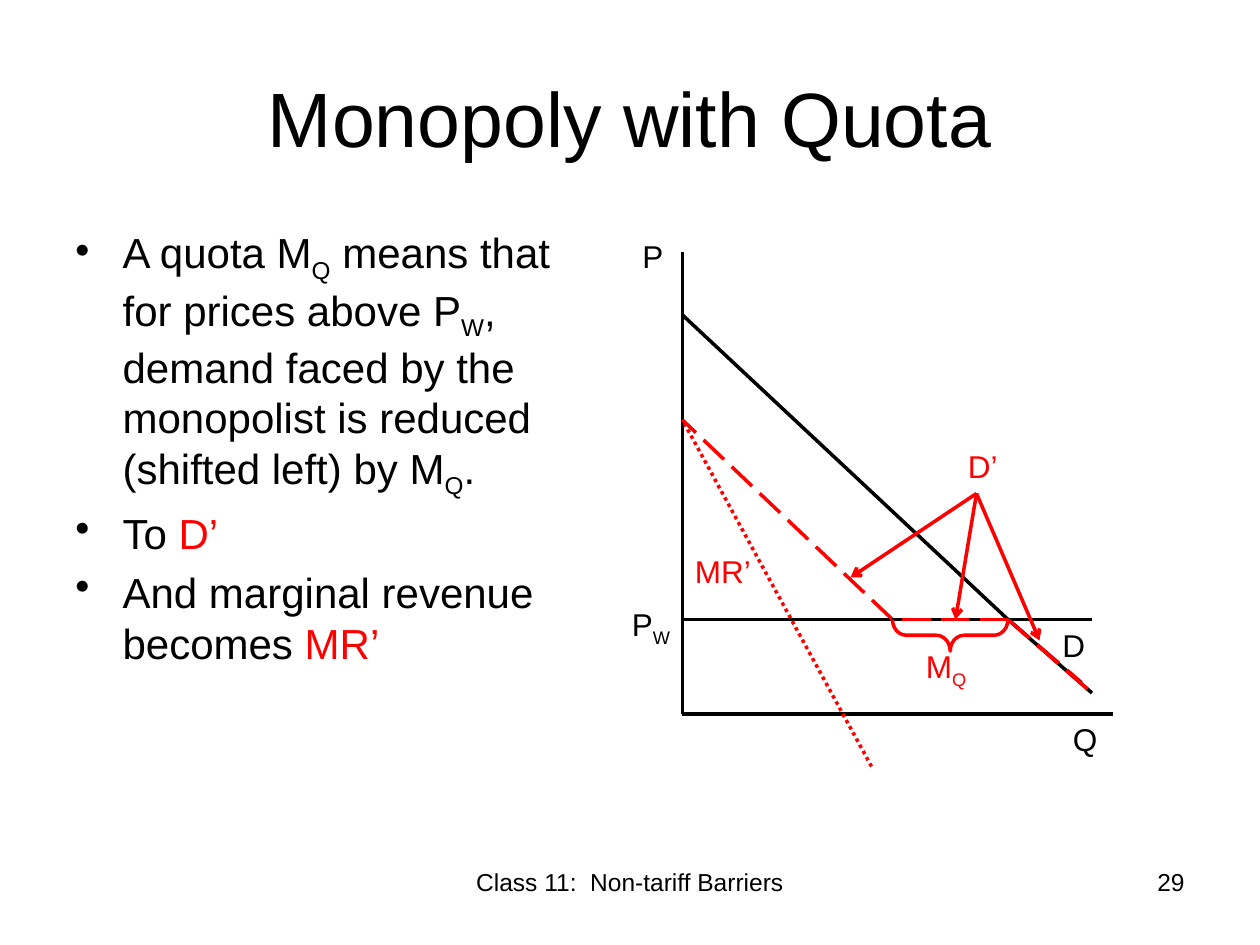
from lxml import etree
from pptx import Presentation, util as u
from pptx.dml.color import RGBColor
from pptx.enum import dml, shapes, text
from pptx.oxml import ns

BLACK, RED = "000000", "FF0000"
LEFT, CENTER, RIGHT = text.PP_ALIGN.LEFT, text.PP_ALIGN.CENTER, text.PP_ALIGN.RIGHT
DASH, DOT = dml.MSO_LINE.LONG_DASH, dml.MSO_LINE.ROUND_DOT

deck = Presentation()
deck.slide_width, deck.slide_height = u.Inches(10), u.Inches(7.5)
slide = deck.slides.add_slide(deck.slide_layouts[6])
cell = deck.slide_width // 120


def color(fmt, hex_value):
    fmt.rgb = RGBColor.from_string(hex_value)


def write(area, paragraphs, size, hex_value=BLACK, align=LEFT):
    box = slide.shapes.add_textbox(*(round(n * cell) for n in area))
    frame = box.text_frame
    frame.word_wrap = True
    for i, pieces in enumerate(paragraphs):
        paragraph = frame.add_paragraph() if i else frame.paragraphs[0]
        paragraph.alignment = align
        paragraph.font.name, paragraph.font.size = "Arial", u.Pt(size)
        color(paragraph.font.color, hex_value)
        for words, *style in pieces:
            run = paragraph.add_run()
            run.text = words
            if "sub" in style:
                run.font._element.set("baseline", "-25000")
            if RED in style:
                color(run.font.color, RED)
    return frame


title = write((6, 3.6, 108, 15), [[("Monopoly with Quota",)]], 44, align=CENTER)
title.vertical_anchor = text.MSO_ANCHOR.MIDDLE

points = write((6, 21, 49, 59.4), [
    [("A quota M",), ("Q", "sub"), (" means that for prices above P",), ("W", "sub"),
     (", demand faced by the monopolist is reduced (shifted left) by M",),
     ("Q", "sub"), (".",)],
    [("To ",), ("D’", RED)],
    [("And marginal revenue becomes ",), ("MR’", RED)],
], 24)
for point in points.paragraphs:
    point.space_before = u.Pt(4.8)
    layout = point._p.get_or_add_pPr()
    layout.set("marL", str(round(4.5 * cell)))
    layout.set("indent", str(round(-4.5 * cell)))
    bullet = etree.Element(ns.qn("a:buChar"), char="•")
    layout.find(ns.qn("a:defRPr")).addprevious(bullet)

origin, price_top, quantity_end = (65, 68), (65, 24), (106, 68)
world_price, quota_start, quota_end = (65, 59), (85, 59), (96, 59)
demand_top, demand_end, reduced_top = (65, 30), (104, 66), (65, 40)
pointer = (93, 47)
curves = [
    (origin, quantity_end, BLACK, None, False),
    (origin, price_top, BLACK, None, False),
    (quota_end, demand_top, BLACK, None, False),
    (world_price, quota_start, BLACK, None, False),
    (quota_start, reduced_top, RED, DASH, False),
    (quota_end, (103, 65), RED, DASH, False),
    (quota_end, (104, 59), BLACK, None, False),
    ((83, 73), reduced_top, RED, DOT, False),
    (pointer, (81, 55), RED, None, True),
    (pointer, (91, 59), RED, None, True),
    (pointer, (99, 61), RED, None, True),
    (quota_start, quota_end, BLACK, None, False),
    (quota_end, demand_end, BLACK, None, False),
    (quota_end, quota_start, RED, DASH, False),
    (quota_end, demand_end, RED, DASH, False),
]
for start, end, hex_value, dash, arrow in curves:
    curve = slide.shapes.add_connector(
        shapes.MSO_CONNECTOR.STRAIGHT, *(n * cell for n in start + end))
    curve.line.width = u.Pt(2)
    color(curve.line.color, hex_value)
    if dash:
        curve.line.dash_style = dash
    if arrow:
        etree.SubElement(curve.line._get_or_add_ln(), ns.qn("a:tailEnd"), type="arrow")
    etree.SubElement(curve._element.spPr, ns.qn("a:effectLst"))

quota = slide.shapes.add_shape(
    shapes.MSO_SHAPE.LEFT_BRACE, 89 * cell, 55 * cell, 3 * cell, 11 * cell)
quota.rotation = 270
quota.adjustments[0] = 0.44
quota.shadow.inherit = False
quota.fill.background()
quota.line.width = u.Pt(2)
color(quota.line.color, RED)

labels = [
    (60, 22, [("P",)], BLACK),
    (100, 59, [("D",)], BLACK),
    (59, 57, [("P",), ("W", "sub")], BLACK),
    (87, 61, [("M",), ("Q", "sub")], RED),
    (91, 42, [("D’",)], RED),
    (65, 52, [("MR’",)], RED),
    (101, 68, [("Q",)], BLACK),
]
for column, row, pieces, hex_value in labels:
    write((column, row, 9, 4.8), [pieces], 18, hex_value)

write((41, 82, 38, 6.25), [[("Class 11:  Non-tariff Barriers",)]], 14, align=CENTER)
write((86, 82, 28, 6.25), [[("29",)]], 14, align=RIGHT)

deck.save("out.pptx")
